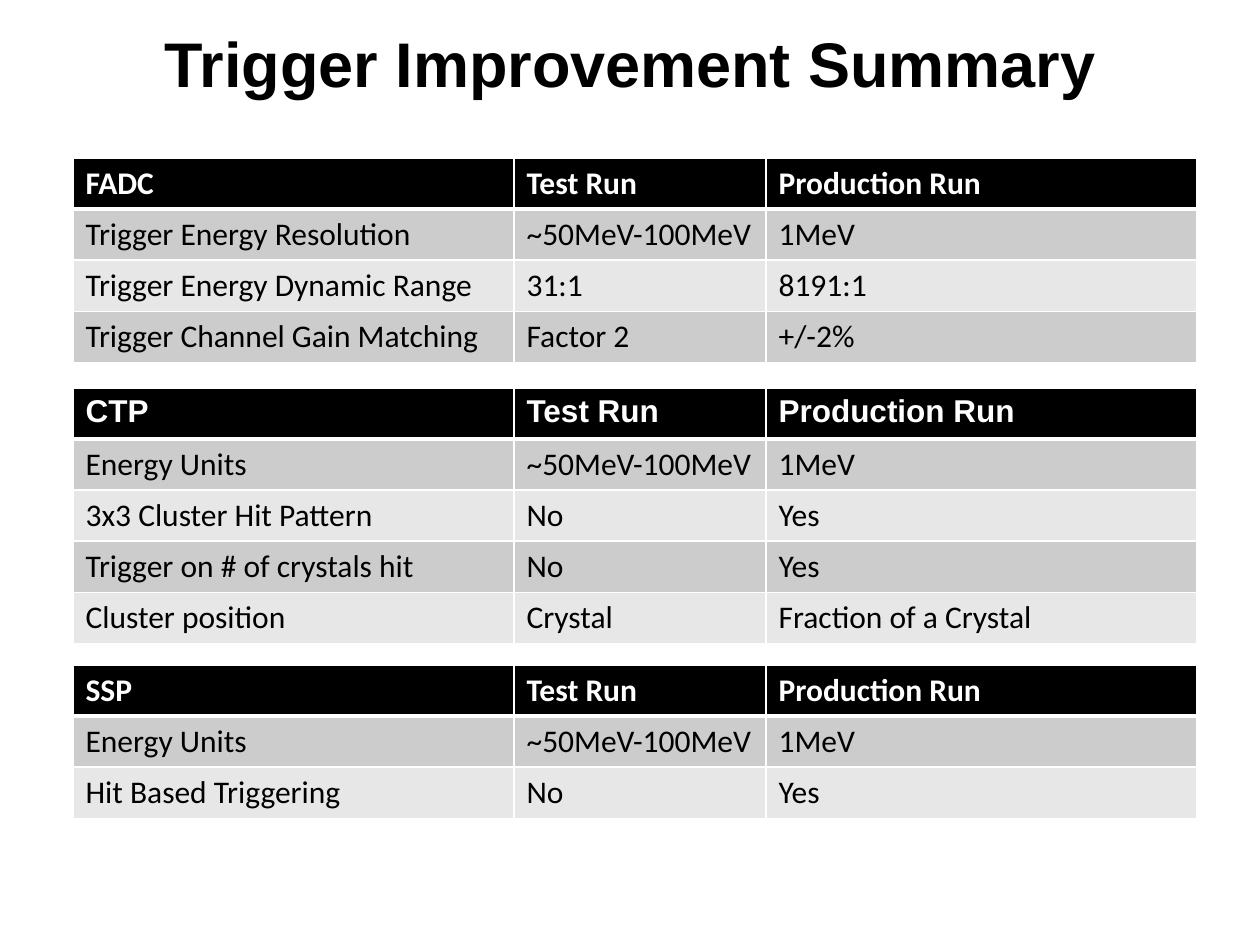
from lxml.etree import SubElement
from pptx import Presentation
from pptx.dml.color import RGBColor
from pptx.enum.text import MSO_ANCHOR, PP_ALIGN
from pptx.oxml.ns import qn
from pptx.util import Emu, Pt

BLACK = RGBColor(0x00, 0x00, 0x00)
WHITE = RGBColor(0xFF, 0xFF, 0xFF)
DARK_BAND = RGBColor(0xCC, 0xCC, 0xCC)
LIGHT_BAND = RGBColor(0xE7, 0xE7, 0xE7)

PX_PER_INCH = 126
TABLE_LEFT = 73
COLUMN_WIDTHS = (441, 252, 431)
ROW_HEIGHT = 51
THIN, THICK = Pt(1), Pt(3)

TITLE_FORMAT = {"name": "Arial", "size": Pt(36), "bold": True}
HEADER_FORMAT = {"size": Pt(18), "bold": True}
BODY_FORMAT = {"name": "Calibri", "size": Pt(18), "bold": False}

ENERGY_STEP = ("~50MeV-100MeV", "1MeV")

# Each table: top, header font, name, rows below the header
TABLES = (
    (158, "Calibri", "FADC", (
        ("Trigger Energy Resolution", *ENERGY_STEP),
        ("Trigger Energy Dynamic Range", "31:1", "8191:1"),
        ("Trigger Channel Gain Matching", "Factor 2", "+/-2%"),
    )),
    (388, "Arial", "CTP", (
        ("Energy Units", *ENERGY_STEP),
        ("3x3 Cluster Hit Pattern", "No", "Yes"),
        ("Trigger on # of crystals hit", "No", "Yes"),
        ("Cluster position", "Crystal", "Fraction of a Crystal"),
    )),
    (665, "Calibri", "SSP", (
        ("Energy Units", *ENERGY_STEP),
        ("Hit Based Triggering", "No", "Yes"),
    )),
)


def px(length):
    return Emu(round(length * 914400 / PX_PER_INCH))


def write(paragraph, text, color, font_format):
    run = paragraph.add_run()
    run.text = text
    for name, value in font_format.items():
        setattr(run.font, name, value)
    run.font.color.rgb = color


def add_title(slide, text):
    title = slide.shapes.title
    title.left, title.top, title.width, title.height = map(px, (95, 10, 1071, 105))
    frame = title.text_frame
    frame.word_wrap = True
    frame.vertical_anchor = MSO_ANCHOR.MIDDLE
    paragraph = frame.paragraphs[0]
    paragraph.alignment = PP_ALIGN.CENTER
    write(paragraph, text, BLACK, TITLE_FORMAT)


def set_borders(cell, top, bottom):
    properties = cell._tc.get_or_add_tcPr()
    for side, width in (("L", THIN), ("R", THIN), ("T", top), ("B", bottom)):
        line = SubElement(properties, qn(f"a:ln{side}"), w=str(width))
        fill = SubElement(line, qn("a:solidFill"))
        SubElement(fill, qn("a:srgbClr"), val=str(WHITE))


def fill_cell(cell, text, row, header_font):
    # The thick rule is shared by the header and the first body row
    set_borders(cell, THICK if row == 1 else THIN, THICK if row == 0 else THIN)
    cell.fill.solid()
    paragraph = cell.text_frame.paragraphs[0]
    if row == 0:
        cell.fill.fore_color.rgb = BLACK
        write(paragraph, text, WHITE, {"name": header_font, **HEADER_FORMAT})
    else:
        cell.fill.fore_color.rgb = DARK_BAND if row % 2 else LIGHT_BAND
        write(paragraph, text, BLACK, BODY_FORMAT)


def add_comparison(slide, top, header_font, name, body_rows):
    rows = ((name, "Test Run", "Production Run"), *body_rows)
    table = slide.shapes.add_table(
        len(rows), len(COLUMN_WIDTHS), px(TABLE_LEFT), px(top),
        px(sum(COLUMN_WIDTHS)), px(ROW_HEIGHT * len(rows))).table
    for column, width in zip(table.columns, COLUMN_WIDTHS):
        column.width = px(width)
    for row, texts in enumerate(rows):
        table.rows[row].height = px(ROW_HEIGHT)
        for column, text in enumerate(texts):
            fill_cell(table.cell(row, column), text, row, header_font)


def main():
    presentation = Presentation()
    presentation.slide_width, presentation.slide_height = px(1260), px(945)
    slide = presentation.slides.add_slide(presentation.slide_layouts[5])

    add_title(slide, "Trigger Improvement Summary")

    # One comparison table for each trigger stage
    for table in TABLES:
        add_comparison(slide, *table)

    presentation.save("out.pptx")


if __name__ == "__main__":
    main()
